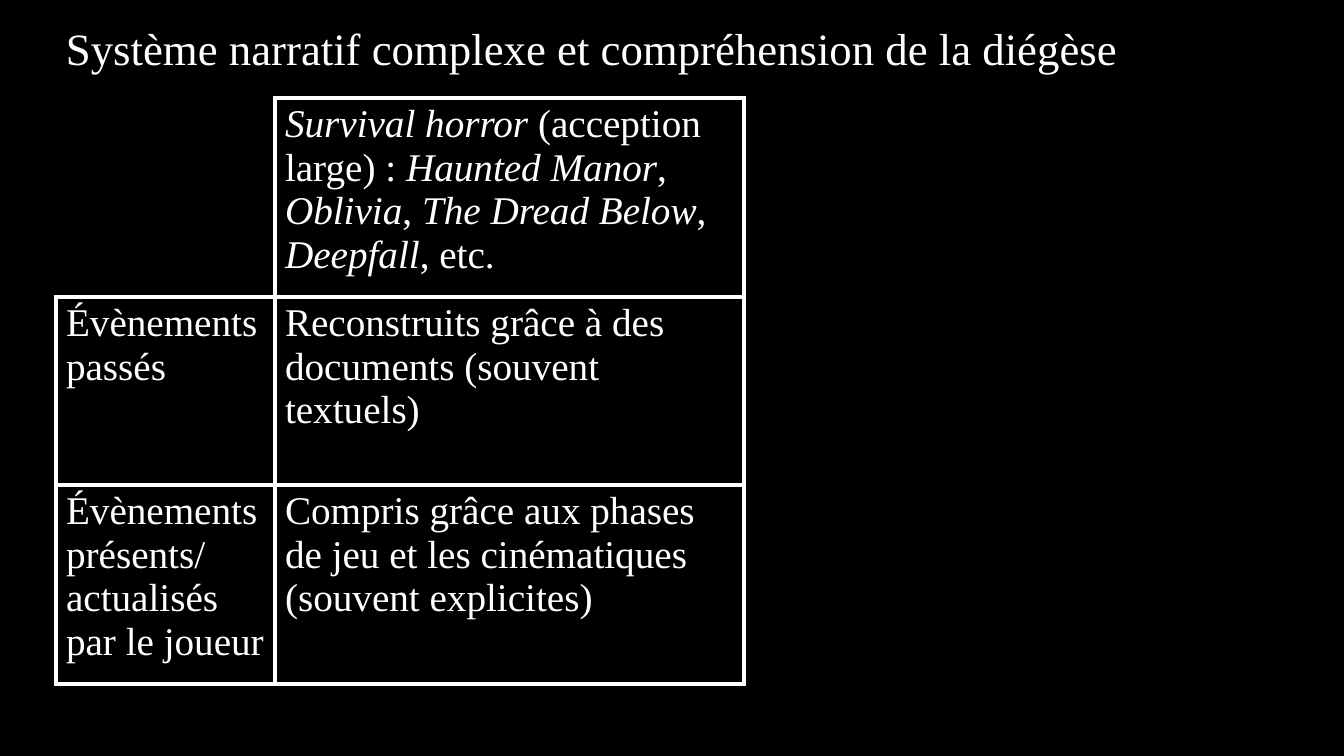
from lxml.etree import SubElement
from pptx import Presentation
from pptx.dml.color import RGBColor
from pptx.enum.text import MSO_AUTO_SIZE, PP_ALIGN
from pptx.oxml.ns import qn
from pptx.util import Pt

PX = 914400 / 100.8
BLACK = RGBColor(0, 0, 0)
WHITE = RGBColor(255, 255, 255)
FONT = "Times New Roman"
TITLE = "Système narratif complexe et compréhension de la diégèse"
COLUMN_WIDTHS = [219, 469]
ROW_HEIGHTS = [199, 188, 199]
GENRE_SPANS = [
    ("Survival horror ", True), ("(acception large) : ", False),
    ("Haunted Manor", True), (", ", False), ("Oblivia", True), (", ", False),
    ("The Dread Below", True), (", ", False), ("Deepfall", True), (", etc.", False),
]
ROWS = [
    [[], GENRE_SPANS],
    [[("Évènements passés", False)],
     [("Reconstruits grâce à des documents (souvent textuels)", False)]],
    [[("Évènements présents/\nactualisés par le joueur", False)],
     [("Compris grâce aux phases de jeu et les cinématiques (souvent explicites)", False)]],
]


def px(length):
    """Turn pixels into EMU."""
    return round(length * PX)


def style_font(para, size):
    """Set the shared white serif font on a paragraph."""
    para.font.name = FONT
    para.font.size = Pt(size)
    para.font.color.rgb = WHITE


def add_title(page, text):
    """Add the justified slide title."""
    box = page.shapes.add_textbox(px(56), px(16), px(1200), px(64))
    frame = box.text_frame
    frame.word_wrap = True
    frame.auto_size = MSO_AUTO_SIZE.SHAPE_TO_FIT_TEXT
    para = frame.paragraphs[0]
    para.text = text
    para.alignment = PP_ALIGN.JUSTIFY
    style_font(para, 32)


def set_borders(cell, visible):
    """Draw the named sides in white and clear the others."""
    properties = cell._tc.get_or_add_tcPr()
    for side in "LRTB":
        line = SubElement(properties, qn(f"a:ln{side}"), w=str(Pt(3)))
        if side in visible:
            fill = SubElement(line, qn("a:solidFill"))
            SubElement(fill, qn("a:srgbClr"), val=str(WHITE))
        else:
            SubElement(line, qn("a:noFill"))


def fill_cell(cell, spans, visible):
    """Give a cell its borders, black fill and text spans."""
    set_borders(cell, visible)
    cell.fill.solid()
    cell.fill.fore_color.rgb = BLACK
    para = cell.text_frame.paragraphs[0]
    style_font(para, 28)
    for text, italic in spans:
        for index, part in enumerate(text.split("\n")):
            if index:
                para.add_line_break()
            span = para.add_run()
            span.text = part
            span.font.italic = italic


def add_comparison_table(page):
    """Add the table of narrative events."""
    table = page.shapes.add_table(
        len(ROW_HEIGHTS), len(COLUMN_WIDTHS), px(56), px(98),
        px(sum(COLUMN_WIDTHS)), px(sum(ROW_HEIGHTS))).table
    table.first_row = False
    table.horz_banding = False
    for column, width in zip(table.columns, COLUMN_WIDTHS):
        column.width = px(width)
    for row, height, contents in zip(table.rows, ROW_HEIGHTS, ROWS):
        row.height = px(height)
        for cell, spans in zip(row.cells, contents):
            fill_cell(cell, spans, "LRTB" if spans else "RB")


def main():
    """Build and save the slide."""
    deck = Presentation()
    deck.slide_width, deck.slide_height = px(1344), px(756)
    page = deck.slides.add_slide(deck.slide_layouts[6])
    page.background.fill.solid()
    page.background.fill.fore_color.rgb = BLACK
    add_title(page, TITLE)
    add_comparison_table(page)
    deck.save("out.pptx")


if __name__ == "__main__":
    main()
